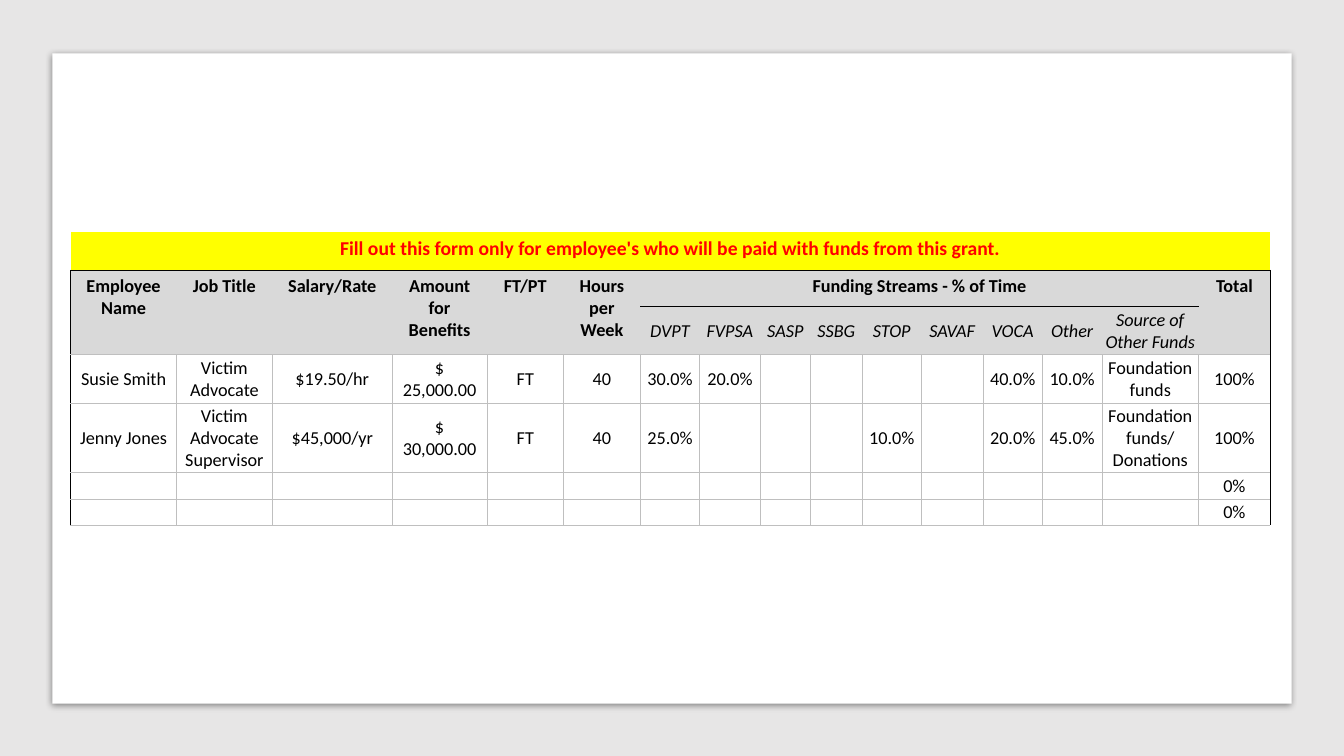
from lxml.etree import SubElement
from pptx import Presentation
from pptx.dml.color import RGBColor
from pptx.enum.shapes import MSO_SHAPE
from pptx.enum.text import MSO_ANCHOR, PP_ALIGN
from pptx.oxml.ns import qn
from pptx.util import Inches, Pt

BLACK, GREY, HEADER = "000000", "BFBFBF", "D9D9D9"
NO_STYLE = "{2D5ABB26-0587-4C30-8999-92F81FD0307C}"


def rgb(color):
    return RGBColor.from_string(color)


def set_borders(cell, borders):
    """Draw 0.5 pt lines; borders maps a side (L, R, T, B) to a colour."""
    tcPr = cell._tc.get_or_add_tcPr()
    for side in "LRTB":
        if side in borders:
            ln = SubElement(tcPr, qn(f"a:ln{side}"), w=str(Pt(0.5)))
            fill = SubElement(ln, qn("a:solidFill"))
            SubElement(fill, qn("a:srgbClr"), val=borders[side])


prs = Presentation()
prs.slide_width, prs.slide_height = Inches(13.33), Inches(7.5)
s = prs.slides.add_slide(prs.slide_layouts[6])

# Backdrop and white card
for box, color in [((0, 0, 13.33, 7.5), "E7E6E6"), ((0.52, 0.53, 12.29, 6.45), "FFFFFF")]:
    card = s.shapes.add_shape(MSO_SHAPE.RECTANGLE, *[Inches(v) for v in box])
    card.shadow.inherit = False
    card.fill.solid()
    card.fill.fore_color.rgb = rgb(color)
    card.line.fill.background()

effects = card._element.spPr.find(qn("a:effectLst"))
shadow = SubElement(effects, qn("a:outerShdw"), blurRad=str(Pt(5)), dist=str(Pt(1.4)),
                    dir="5400000", algn="t", rotWithShape="0")
shadow_color = SubElement(shadow, qn("a:srgbClr"), val=BLACK)
SubElement(shadow_color, qn("a:alpha"), val="43000")

# Staffing table
col_widths = [1.05, 0.95, 1.19, 0.94, 0.76, 0.76, 0.59, 0.6,
              0.5, 0.51, 0.59, 0.61, 0.59, 0.59, 0.96, 0.71]
row_heights = [0.38, 0.36, 0.48, 0.48, 0.69, 0.26, 0.26]
rows = [
    ["Fill out this form only for employee's who will be paid with funds from this grant."]
    + [""] * 15,
    ["Employee Name", "Job Title", "Salary/Rate", "Amount for Benefits", "FT/PT",
     "Hours per Week", "Funding Streams - % of Time"] + [""] * 8 + ["Total"],
    [""] * 6 + ["DVPT", "FVPSA", "SASP", "SSBG", "STOP", "SAVAF", "VOCA", "Other",
                "Source of Other Funds", ""],
    ["Susie Smith", "Victim Advocate", "$19.50/hr", "$\v25,000.00", "FT", "40",
     "30.0%", "20.0%", "", "", "", "", "40.0%", "10.0%", "Foundation funds", "100%"],
    ["Jenny Jones", "Victim Advocate Supervisor", "$45,000/yr", "$\v30,000.00", "FT", "40",
     "25.0%", "", "", "", "10.0%", "", "20.0%", "45.0%", "Foundation funds/ Donations", "100%"],
    [""] * 15 + ["0%"],
    [""] * 15 + ["0%"],
]
last_col = len(col_widths) - 1

frame = s.shapes.add_table(len(rows), len(col_widths), Inches(0.7), Inches(2.3),
                           Inches(sum(col_widths)), Inches(sum(row_heights)))
table = frame.table
table.first_row = table.horz_banding = False
table._tbl.tblPr.find(qn("a:tableStyleId")).text = NO_STYLE
for column, width in zip(table.columns, col_widths):
    column.width = Inches(width)
for row, height in zip(table.rows, row_heights):
    row.height = Inches(height)

for i, row in enumerate(rows):
    is_title = i < 2
    for j, text in enumerate(row):
        cell = table.cell(i, j)
        if is_title:
            cell.margin_left = cell.margin_right = Inches(0.11)
            cell.margin_top = cell.margin_bottom = Inches(0.05)
        else:
            cell.margin_left = cell.margin_right = cell.margin_top = Inches(0.01)
            cell.margin_bottom = 0
            cell.vertical_anchor = MSO_ANCHOR.MIDDLE

        p = cell.text_frame.paragraphs[0]
        p.text = text
        p.alignment = PP_ALIGN.CENTER
        for r in p.runs:
            r.font.name = "Calibri"
            r.font.size = Pt(14 if i == 0 else 13)
            r.font.bold = is_title
            r.font.italic = i == 2
            r.font.color.rgb = rgb("FF0000" if i == 0 else BLACK)
        if not text:
            SubElement(p._p, qn("a:endParaRPr"), sz="1300")

        borders = dict.fromkeys("LRTB", GREY) if i > 2 else {}
        if i == 0:
            borders["B"] = BLACK
        elif i == 1:
            borders["T"] = BLACK
        elif i == 2:
            borders["B"] = GREY
        if i > 0 and j == 0:
            borders["L"] = BLACK
        if i > 0 and j == last_col:
            borders["R"] = BLACK
        if i == 1 and (j < 6 or j == last_col):
            borders["B"] = GREY
        set_borders(cell, borders)

        if i > 2:
            cell.fill.background()
        else:
            cell.fill.solid()
            cell.fill.fore_color.rgb = rgb("FFFF00" if i == 0 else HEADER)

table.cell(0, 0).merge(table.cell(0, last_col))
table.cell(1, 6).merge(table.cell(1, 14))
for j in [*range(6), last_col]:
    table.cell(1, j).merge(table.cell(2, j))

prs.save("out.pptx")
